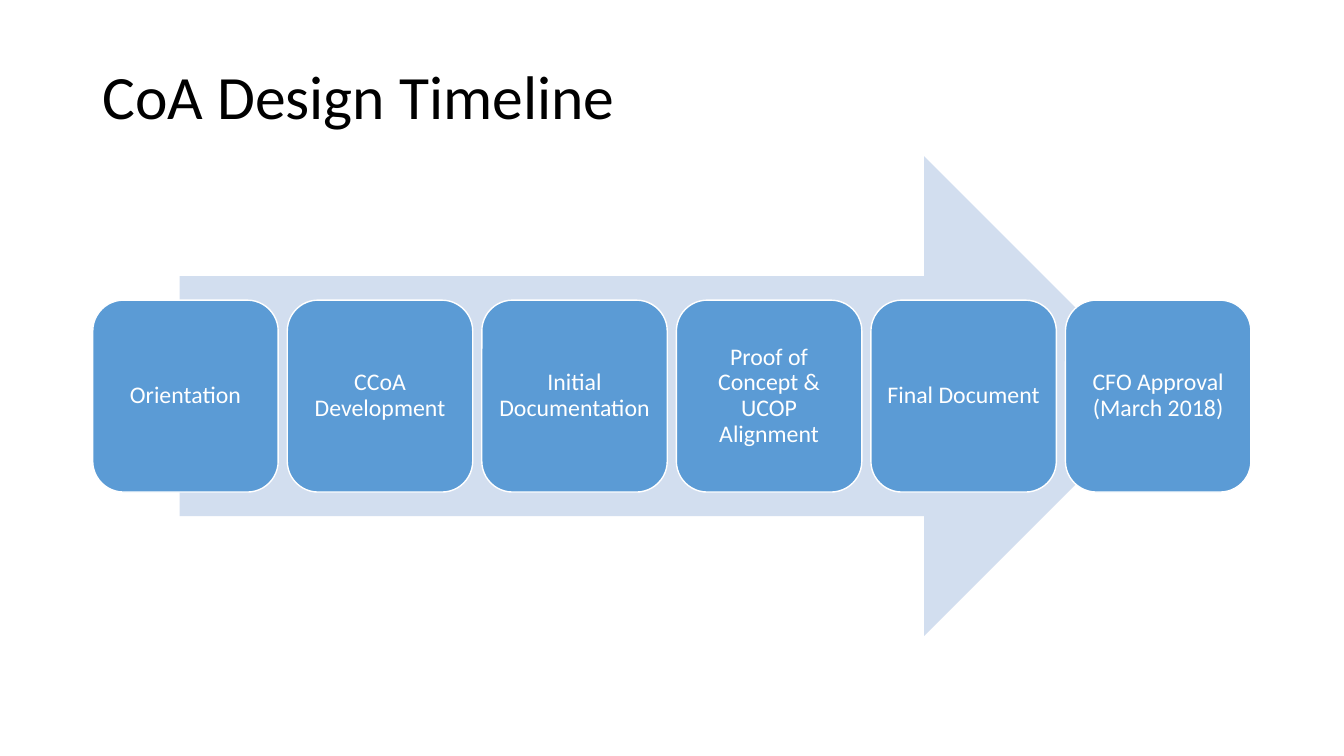
from pptx import Presentation
from pptx import util as u
from pptx.dml.color import RGBColor
from pptx.enum import shapes, text

FONT = "Calibri"
BLACK, WHITE, BLUE, PALE_BLUE = "000000", "FFFFFF", "5B9BD5", "D2DEEF"

# Boxes in points: left, top, width, height
SLIDE_SIZE = (960, 540)
TITLE_BOX = (66, 18.72, 828, 104.4)
TIMELINE_BOX = (66.24, 111.6, 827.28, 342.72)

STAGES = [
    "Orientation",
    "CCoA Development",
    "Initial Documentation",
    "Proof of Concept & UCOP Alignment",
    "Final Document",
    "CFO Approval (March 2018)",
]


def color(hex_value):
    return RGBColor.from_string(hex_value)


def apply_format(target, values):
    for name, value in values.items():
        setattr(target, name, value)


def write_text(shape, words, size, hex_value, align, inset_x, inset_y):
    frame = shape.text_frame
    frame.text = words
    apply_format(frame, {
        "word_wrap": True,
        "auto_size": text.MSO_AUTO_SIZE.NONE,
        "vertical_anchor": text.MSO_ANCHOR.MIDDLE,
        "margin_left": u.Pt(inset_x), "margin_right": u.Pt(inset_x),
        "margin_top": u.Pt(inset_y), "margin_bottom": u.Pt(inset_y),
    })
    paragraph = frame.paragraphs[0]
    apply_format(paragraph, {"alignment": align, "line_spacing": 0.9})
    font = paragraph.runs[0].font
    apply_format(font, {"name": FONT, "size": u.Pt(size)})
    font.color.rgb = color(hex_value)


def add_filled_shape(slide, kind, box, fill):
    shape = slide.shapes.add_shape(kind, *map(u.Pt, box))
    shape.shadow.inherit = False
    shape.fill.solid()
    shape.fill.fore_color.rgb = color(fill)
    shape.line.fill.background()
    return shape


def place_title(slide, box, words):
    title = slide.shapes.title
    apply_format(title, dict(zip(("left", "top", "width", "height"), map(u.Pt, box))))
    write_text(title, words, 44, BLACK, text.PP_ALIGN.LEFT, 7.2, 3.6)


def add_timeline(slide, box, stages):
    left, top, width, height = box

    # Background arrow, centred behind the stages
    arrow_width = 0.85 * width
    arrow_box = (left + (width - arrow_width) / 2, top, arrow_width, height)
    add_filled_shape(slide, shapes.MSO_SHAPE.RIGHT_ARROW, arrow_box, PALE_BLUE)

    # Evenly spaced stages
    gap = 6.5
    stage_width = (width - gap * (len(stages) - 1)) / len(stages)
    stage_height = 0.4 * height
    stage_top = top + (height - stage_height) / 2
    for index, words in enumerate(stages):
        stage_box = (left + index * (stage_width + gap), stage_top, stage_width, stage_height)
        stage = add_filled_shape(slide, shapes.MSO_SHAPE.ROUNDED_RECTANGLE, stage_box, BLUE)
        stage.line.color.rgb = color(WHITE)
        stage.line.width = u.Pt(1)
        write_text(stage, words, 17, WHITE, text.PP_ALIGN.CENTER, 5, 5)


def main():
    presentation = Presentation()
    presentation.slide_width, presentation.slide_height = map(u.Pt, SLIDE_SIZE)
    slide = presentation.slides.add_slide(presentation.slide_layouts[5])
    place_title(slide, TITLE_BOX, "CoA Design Timeline")
    add_timeline(slide, TIMELINE_BOX, STAGES)
    presentation.save("out.pptx")


if __name__ == "__main__":
    main()
